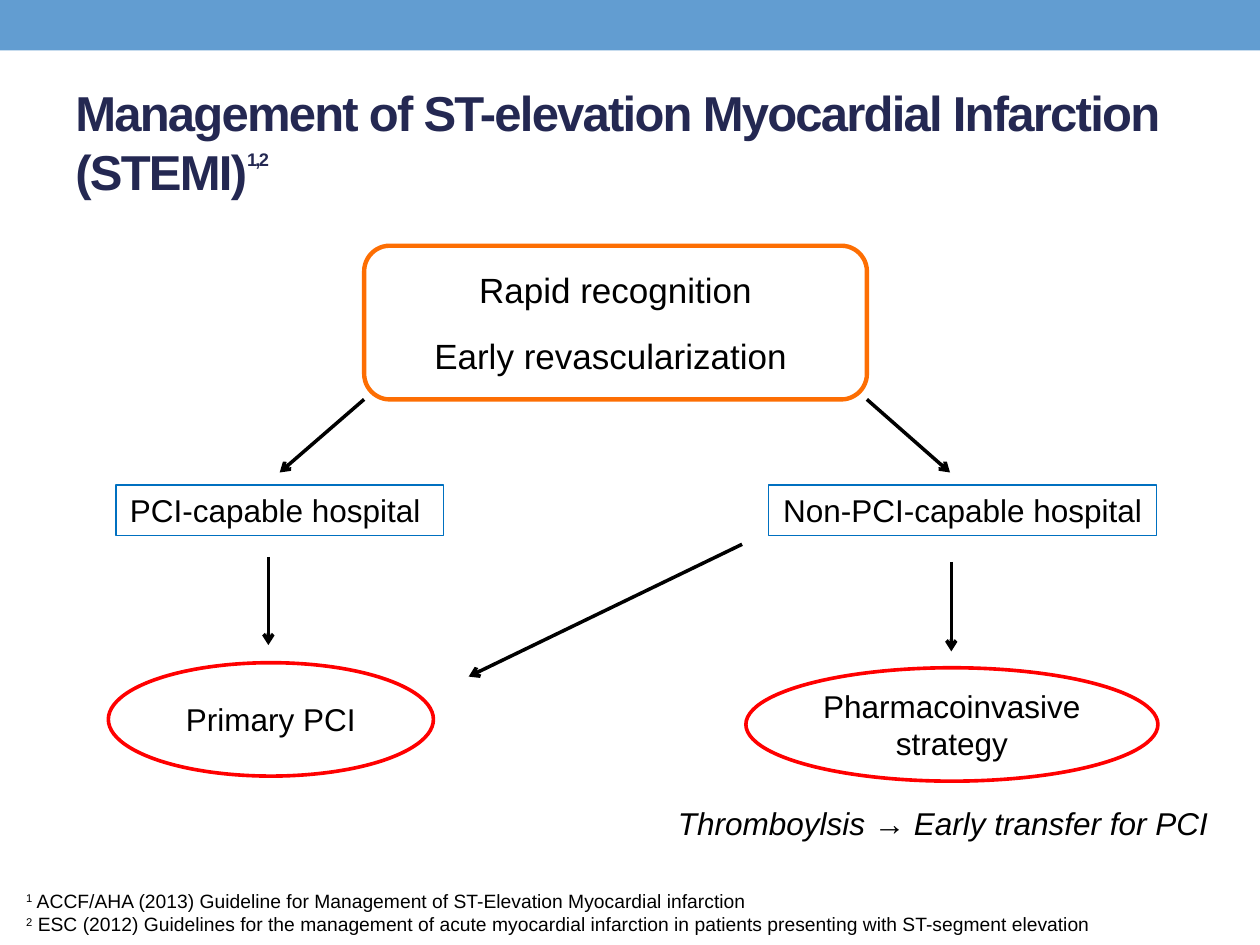
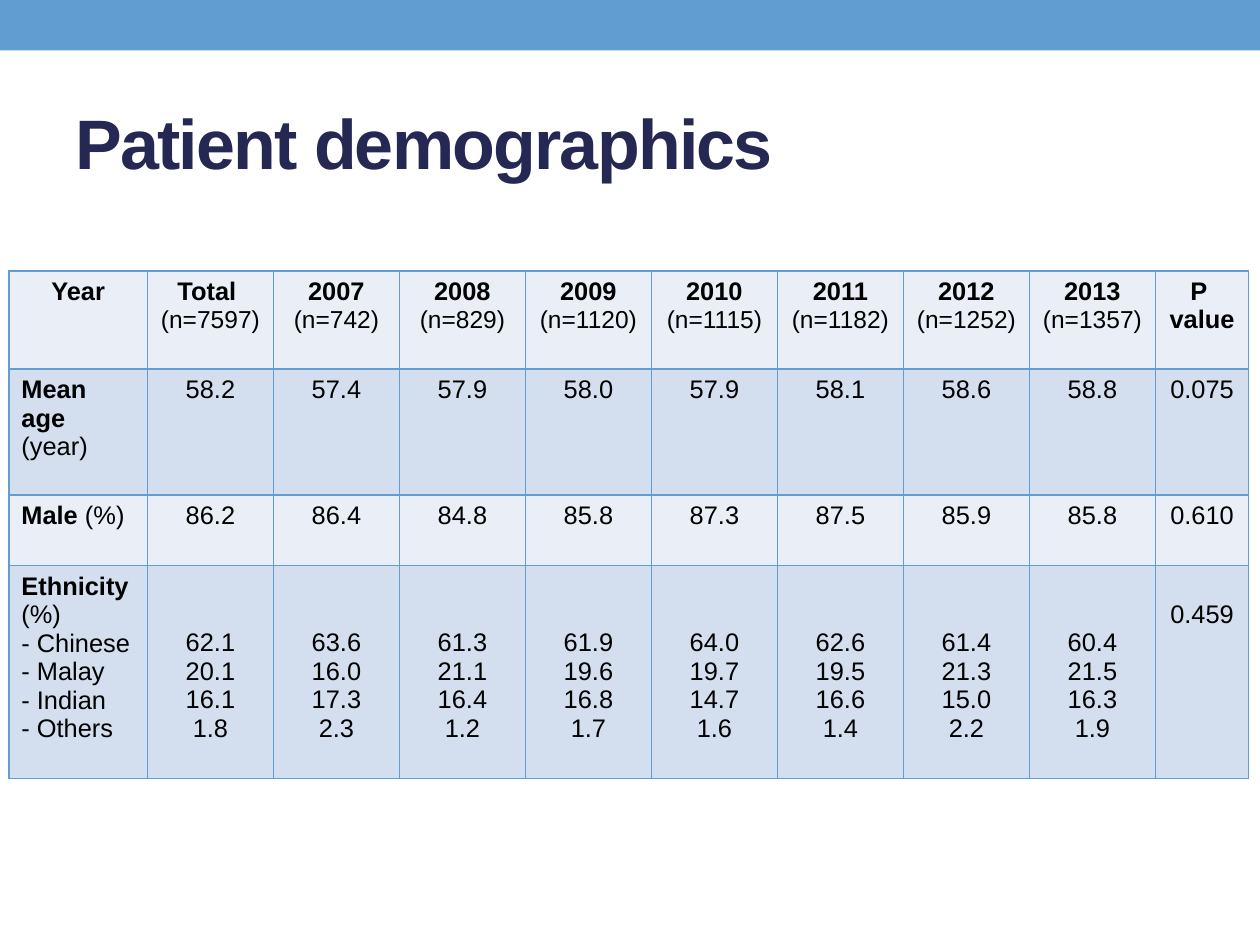
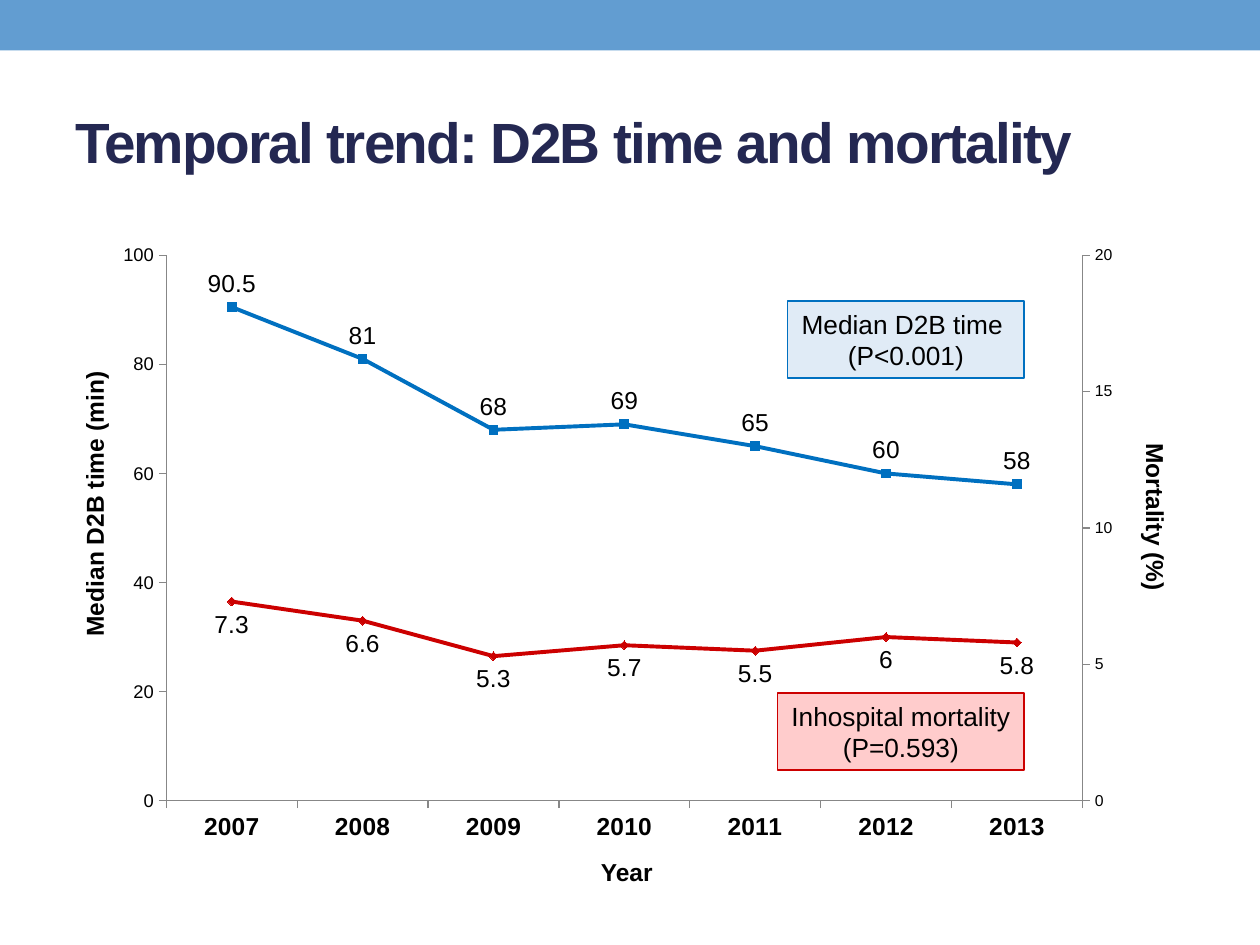
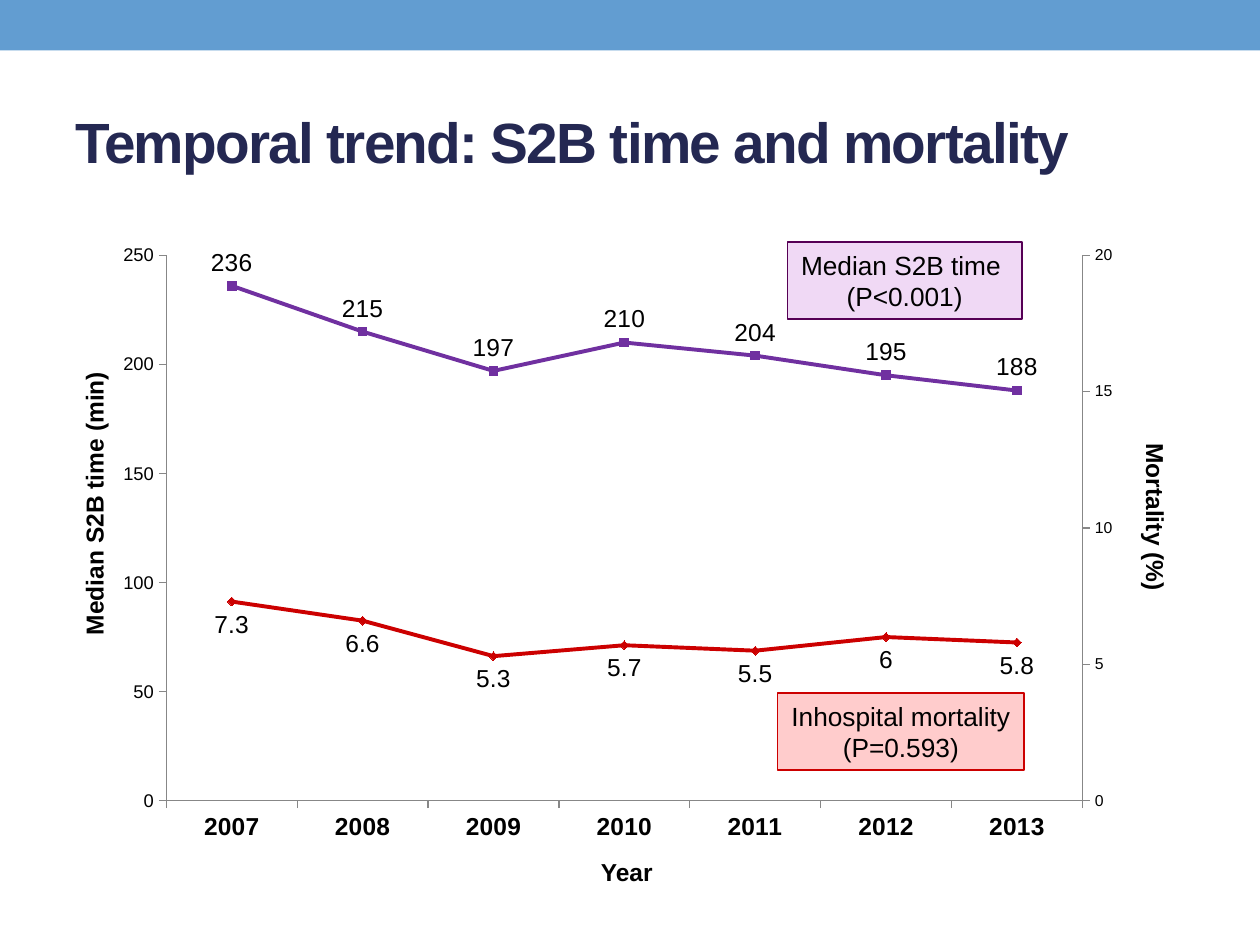
from copy import deepcopy
from dataclasses import dataclass
from typing import NamedTuple

from lxml.etree import SubElement
from pptx import Presentation
from pptx.chart.data import CategoryChartData
from pptx.dml.color import RGBColor
from pptx.enum.chart import XL_CHART_TYPE as ChartType
from pptx.enum.chart import XL_LABEL_POSITION as LabelPosition
from pptx.enum.chart import XL_MARKER_STYLE as Marker
from pptx.enum.chart import XL_TICK_MARK as TickMark
from pptx.enum.shapes import MSO_CONNECTOR as Connector
from pptx.enum.shapes import MSO_SHAPE as Shape
from pptx.enum.text import MSO_ANCHOR as Anchor
from pptx.enum.text import PP_ALIGN as Align
from pptx.oxml.ns import qn
from pptx.util import Inches, Pt

SLIDE_WIDTH, SLIDE_HEIGHT = Inches(10), Inches(7.5)
COLUMNS, ROWS = 100, 75
FONT = "Arial"
COLORS = {
    "band": "629DD1", "title": "242852", "text": "000000", "white": "FFFFFF",
    "orange": "FD6E03", "blue": "0070C0", "red": "FF0000",
    "light row": "EAEFF7", "dark row": "D3DFEE", "axis": "878787",
    "pale blue": "E0EBF6", "mortality": "CC0000", "pale red": "FFCCCC",
    "purple": "7030A0", "dark purple": "560055", "pale purple": "F0D9F5",
}


class Box(NamedTuple):
    """Left, top, width and height in grid columns and rows."""
    left: float
    top: float
    width: float
    height: float


class Run(NamedTuple):
    text: str
    bold: bool | None = None
    size: float | None = None
    baseline: int = 0


Paragraphs = list[str | list[Run]]


@dataclass
class Node:
    box: Box
    text: Paragraphs
    line: str
    weight: float = 0.75
    kind: Shape = Shape.RECTANGLE
    fill: str | None = None
    size: float = 18
    wrap: bool = False
    gap: float = 0


class Arrow(NamedTuple):
    start: tuple[float, float]
    end: tuple[float, float]


@dataclass
class Trend:
    """A timing measure set against mortality."""
    measure: str
    values: list[float]
    maximum: float
    step: float
    color: str
    note: Node
    label_box: Box


def across(columns: float) -> int:
    return round(SLIDE_WIDTH * columns / COLUMNS)


def down(rows: float) -> int:
    return round(SLIDE_HEIGHT * rows / ROWS)


def place(box: Box) -> tuple[int, int, int, int]:
    return across(box.left), down(box.top), across(box.width), down(box.height)


def rgb(name: str) -> RGBColor:
    return RGBColor.from_string(COLORS[name])


def write_text(frame, paragraphs: Paragraphs, *, size: float = 18, color: str = "text",
               bold: bool = False, italic: bool = False, align=Align.CENTER,
               anchor=Anchor.TOP, wrap: bool = True, gap: float = 0, tracking: float = 0):
    frame.word_wrap = wrap
    frame.vertical_anchor = anchor
    for index, content in enumerate(paragraphs):
        paragraph = frame.add_paragraph() if index else frame.paragraphs[0]
        paragraph.alignment = align
        if index and gap:
            paragraph.space_before = Pt(gap)
        for part in [Run(content)] if isinstance(content, str) else content:
            run = paragraph.add_run()
            run.text = part.text
            font = run.font
            font.name, font.size = FONT, Pt(part.size or size)
            font.bold = bold if part.bold is None else part.bold
            font.italic = italic
            font.color.rgb = rgb(color)
            properties = run._r.get_or_add_rPr()
            if tracking:
                properties.set("spc", str(round(tracking * 100)))
            if part.baseline:
                properties.set("baseline", str(part.baseline * 1000))


def add_text(slide, box: Box, paragraphs: Paragraphs, *, rotation: float = 0, **text_format):
    text_box = slide.shapes.add_textbox(*place(box))
    text_box.rotation = rotation
    write_text(text_box.text_frame, paragraphs, **text_format)


def add_node(slide, node: Node):
    shape = slide.shapes.add_shape(node.kind, *place(node.box))
    shape.shadow.inherit = False
    if node.fill:
        shape.fill.solid()
        shape.fill.fore_color.rgb = rgb(node.fill)
    else:
        shape.fill.background()
    shape.line.color.rgb = rgb(node.line)
    shape.line.width = Pt(node.weight)
    write_text(shape.text_frame, node.text, size=node.size, wrap=node.wrap,
               anchor=Anchor.MIDDLE, gap=node.gap)


def add_arrow(slide, arrow: Arrow):
    (x1, y1), (x2, y2) = arrow
    connector = slide.shapes.add_connector(
        Connector.STRAIGHT, across(x1), down(y1), across(x2), down(y2))
    connector.line.color.rgb = rgb("text")
    connector.line.width = Pt(2)
    SubElement(connector.line._get_or_add_ln(), qn("a:tailEnd"), type="arrow")
    SubElement(connector.element.spPr, qn("a:effectLst"))


def add_slide(presentation, title: str | list[Run], size: float):
    """Start a slide with the shared top band and title."""
    slide = presentation.slides.add_slide(presentation.slide_layouts[6])
    band = slide.shapes.add_shape(Shape.RECTANGLE, *place(Box(0, 0, COLUMNS, 4)))
    band.shadow.inherit = False
    band.fill.solid()
    band.fill.fore_color.rgb = rgb("band")
    band.line.fill.background()
    add_text(slide, Box(5, 5.8, 90, 10.8), [title], size=size, color="title", bold=True,
             align=Align.LEFT, anchor=Anchor.MIDDLE, tracking=-1)
    return slide


RECOGNITION = Node(Box(28.9, 19.5, 39.9, 12.2), ["Rapid recognition", "Early revascularization "],
                   "orange", 2.5, Shape.FLOWCHART_ALTERNATE_PROCESS, "white", 20, True, 14)
CARE_NODES = [
    RECOGNITION,
    Node(Box(9.2, 38.5, 26, 4), ["PCI-capable hospital "], "blue"),
    Node(Box(61, 38.5, 30.8, 4), ["Non-PCI-capable hospital"], "blue"),
    Node(Box(8.6, 52.6, 25.8, 9), ["Primary PCI"], "red", 2.08, Shape.OVAL, wrap=True),
    Node(Box(59.2, 53, 32.7, 9), ["Pharmacoinvasive strategy"], "red", 2.08, Shape.OVAL, wrap=True),
]
CARE_ARROWS = [
    Arrow((28.9, 31.7), (22.2, 37.5)),
    Arrow((21.3, 44.2), (21.3, 51.2)),
    Arrow((68.8, 31.7), (75.4, 37.5)),
    Arrow((75.5, 44.6), (75.5, 51.7)),
    Arrow((58.9, 43.2), (37.2, 53.7)),
]
REFERENCES = [
    "ACCF/AHA (2013) Guideline for Management of ST-Elevation Myocardial infarction",
    "ESC (2012) Guidelines for the management of acute myocardial infarction in patients "
    "presenting with ST-segment elevation",
]


def build_management(presentation):
    slide = add_slide(presentation, [
        Run("Management of ST-elevation Myocardial Infarction (STEMI)"),
        Run("1,2", size=18, baseline=75)], 28)
    for node in CARE_NODES:
        add_node(slide, node)
    for arrow in CARE_ARROWS:
        add_arrow(slide, arrow)
    add_text(slide, Box(52.2, 63.3, 45.3, 4), ["Thromboylsis → Early transfer for PCI"], italic=True)
    add_text(slide, Box(1.1, 70.1, 91.1, 4.7),
             [[Run(str(number), baseline=30), Run(f" {reference}")]
              for number, reference in enumerate(REFERENCES, 1)],
             size=11, align=Align.LEFT)


YEARS = [str(year) for year in range(2007, 2014)]
PATIENTS = [7597, 742, 829, 1120, 1115, 1182, 1252, 1357]
MEAN_AGES = "58.2 57.4 57.9 58.0 57.9 58.1 58.6 58.8 0.075".split()
MALE_SHARES = "86.2 86.4 84.8 85.8 87.3 87.5 85.9 85.8 0.610".split()
ETHNICITIES = {
    "Chinese": "62.1 63.6 61.3 61.9 64.0 62.6 61.4 60.4".split(),
    "Malay": "20.1 16.0 21.1 19.6 19.7 19.5 21.3 21.5".split(),
    "Indian": "16.1 17.3 16.4 16.8 14.7 16.6 15.0 16.3".split(),
    "Others": "1.8 2.3 1.2 1.7 1.6 1.4 2.2 1.9".split(),
}
COLUMN_WIDTHS = [11] + [10] * 8 + [7.4]
ROW_HEIGHTS = [7.8, 10, 5.6, 16.9]
CELL_MARGIN, LINE_HEIGHT = 0.5, 2.25


def demographic_rows() -> list[list[Paragraphs]]:
    header = [["Year"]] + [
        [[Run(name, True)], [Run(f"(n={count})", size=14)]]
        for name, count in zip(["Total "] + YEARS, PATIENTS)] + [["P ", "value"]]
    ages = [[[Run("Mean age ", True), Run("(year)")]]] + [[value] for value in MEAN_AGES]
    males = [[[Run("Male", True), Run(" (%)")]]] + [[value] for value in MALE_SHARES]
    groups = [[[Run("Ethnicity", True), Run(" (%)")]] + [f"- {name}" for name in ETHNICITIES]]
    shares = [list(values) for values in zip(*ETHNICITIES.values())]
    return [header, ages, males, groups + shares + [["0.459"]]]


def format_cell(cell, fill: str):
    properties = cell._tc.get_or_add_tcPr()
    for side in ("lnL", "lnR", "lnT", "lnB"):
        border = SubElement(properties, qn(f"a:{side}"), w=str(Pt(1)))
        SubElement(SubElement(border, qn("a:solidFill")), qn("a:srgbClr"), val=COLORS["band"])
    cell.fill.solid()
    cell.fill.fore_color.rgb = rgb(fill)


def build_demographics(presentation):
    slide = add_slide(presentation, "Patient demographics", 40)
    rows = demographic_rows()
    box = Box(0.7, 21.5, sum(COLUMN_WIDTHS), sum(ROW_HEIGHTS))
    table = slide.shapes.add_table(len(rows), len(COLUMN_WIDTHS), *place(box)).table
    table.first_row = table.horz_banding = False
    for column, width in zip(table.columns, COLUMN_WIDTHS):
        column.width = across(width)
    last_row, last_column = len(rows) - 1, len(COLUMN_WIDTHS) - 1
    for i, contents in enumerate(rows):
        table.rows[i].height = down(ROW_HEIGHTS[i])
        for j, paragraphs in enumerate(contents):
            cell = table.cell(i, j)
            format_cell(cell, "dark row" if i % 2 else "light row")
            write_text(cell.text_frame, paragraphs, size=14.5,
                       bold=i == 0 and j in (0, last_column),
                       align=Align.CENTER if j or i == 0 else Align.LEFT)
            if i == last_row and j:
                skipped_lines = 1 if j == last_column else 2
                cell.margin_top = down(CELL_MARGIN + skipped_lines * LINE_HEIGHT)


MORTALITY = [7.3, 6.6, 5.3, 5.7, 5.5, 6, 5.8]
MORTALITY_NOTE = Node(Box(61.7, 55, 19.6, 6.1), ["Inhospital mortality", "(P=0.593)"],
                      "mortality", 1, fill="pale red", size=15)
PLOT_SHARES = {"x": 0.06, "y": 0.04, "w": 0.89, "h": 0.88}
TRENDS = [
    Trend("D2B", [90.5, 81, 68, 69, 65, 60, 58], 100, 20, "blue",
          Node(Box(62.5, 23.9, 18.8, 6.1), ["Median D2B time ", "(P<0.001)"],
               "blue", 1, fill="pale blue", size=15),
          Box(-4.1, 38.2, 23.2, 3.4)),
    Trend("S2B", [236, 215, 197, 210, 204, 195, 188], 250, 50, "purple",
          Node(Box(62.5, 19.2, 18.6, 6.1), ["Median S2B time ", "(P<0.001)"],
               "dark purple", 1, fill="pale purple", size=15),
          Box(-4, 38.2, 23, 3.4)),
]


def format_axis(axis, size: float, bold: bool = False):
    axis.has_major_gridlines = False
    axis.major_tick_mark, axis.minor_tick_mark = TickMark.OUTSIDE, TickMark.NONE
    axis.format.line.color.rgb = rgb("axis")
    axis.format.line.width = Pt(0.75)
    axis.tick_labels.font.size = Pt(size)
    axis.tick_labels.font.bold = bold


def format_series(series, color: str, marker, label_position):
    series.smooth = False
    series.format.line.color.rgb = rgb(color)
    series.format.line.width = Pt(2.25)
    series.marker.style, series.marker.size = marker, 5
    series.marker.format.fill.solid()
    series.marker.format.fill.fore_color.rgb = rgb(color)
    series.marker.format.line.color.rgb = rgb(color)
    labels = series.data_labels
    labels.show_value = True
    labels.position = label_position
    labels.font.size = Pt(14)


def set_plot_layout(plot_area):
    for old in plot_area.findall(qn("c:layout")):
        plot_area.remove(old)
    layout = SubElement(plot_area, qn("c:layout"))
    plot_area.insert(0, layout)
    manual = SubElement(layout, qn("c:manualLayout"))
    settings = {"layoutTarget": "inner", "xMode": "edge", "yMode": "edge", **PLOT_SHARES}
    for name, value in settings.items():
        SubElement(manual, qn(f"c:{name}"), val=str(value))


def move_to_right_axis(plot_area, maximum: float, step: float, size: float):
    """Give the second series its own value axis on the right."""
    left_lines = plot_area.find(qn("c:lineChart"))
    left_axes = [plot_area.find(qn("c:catAx")), plot_area.find(qn("c:valAx"))]
    right_lines, category_axis, value_axis = map(deepcopy, [left_lines, *left_axes])
    first, second = left_lines.findall(qn("c:ser"))
    left_lines.remove(second)
    right_lines.remove(right_lines.find(qn("c:ser")))
    left_lines.addnext(right_lines)
    left_axes[1].addnext(value_axis)
    value_axis.addnext(category_axis)

    category_id, value_id = "50010", "50020"
    for element, number in zip(right_lines.findall(qn("c:axId")), (category_id, value_id)):
        element.set("val", number)
    for axis, own, other in ((category_axis, category_id, value_id),
                             (value_axis, value_id, category_id)):
        axis.find(qn("c:axId")).set("val", own)
        axis.find(qn("c:crossAx")).set("val", other)
    category_axis.find(qn("c:delete")).set("val", "1")
    value_axis.find(qn("c:axPos")).set("val", "r")
    value_axis.find(qn("c:crosses")).set("val", "max")
    value_axis.find(qn("c:scaling")).find(qn("c:max")).set("val", str(maximum))
    value_axis.find(qn("c:majorUnit")).set("val", str(step))
    for properties in value_axis.iter(qn("a:defRPr")):
        properties.set("sz", str(size * 100))


def add_trend_chart(slide, trend: Trend):
    data = CategoryChartData()
    data.categories = YEARS
    data.add_series("Series 1", trend.values)
    data.add_series("Series 2", MORTALITY)
    chart = slide.shapes.add_chart(
        ChartType.LINE_MARKERS, *place(Box(8.3, 18.3, 81.7, 49.2)), data).chart
    chart.has_legend = chart.has_title = False
    chart.font.name, chart.font.size = FONT, Pt(18)
    chart.font.color.rgb = rgb("text")
    plot = chart.plots[0]
    plot.vary_by_categories = False
    format_series(plot.series[0], trend.color, Marker.SQUARE, LabelPosition.ABOVE)
    format_series(plot.series[1], "mortality", Marker.DIAMOND, LabelPosition.BELOW)
    format_axis(chart.category_axis, 14, True)
    value_axis = chart.value_axis
    format_axis(value_axis, 10.5)
    value_axis.minimum_scale, value_axis.maximum_scale = 0, trend.maximum
    value_axis.major_unit = trend.step
    plot_area = chart.element.find(qn("c:chart")).find(qn("c:plotArea"))
    set_plot_layout(plot_area)
    move_to_right_axis(plot_area, maximum=20, step=5, size=9)


def build_trend(presentation, trend: Trend):
    slide = add_slide(presentation, f"Temporal trend: {trend.measure} time and mortality", 32.4)
    add_trend_chart(slide, trend)
    add_node(slide, trend.note)
    add_node(slide, MORTALITY_NOTE)
    for box, label, rotation in (
            (trend.label_box, f"Median {trend.measure} time (min)", 270),
            (Box(84.8, 39.4, 13.8, 3.4), "Mortality (%)", 90),
            (Box(46.7, 67.5, 6.2, 3.4), "Year", 0)):
        add_text(slide, box, [label], rotation=rotation, size=14, bold=True,
                 align=Align.LEFT, wrap=False)


def main():
    presentation = Presentation()
    presentation.slide_width, presentation.slide_height = SLIDE_WIDTH, SLIDE_HEIGHT
    build_management(presentation)
    build_demographics(presentation)
    for trend in TRENDS:
        build_trend(presentation, trend)
    presentation.save("out.pptx")


if __name__ == "__main__":
    main()
